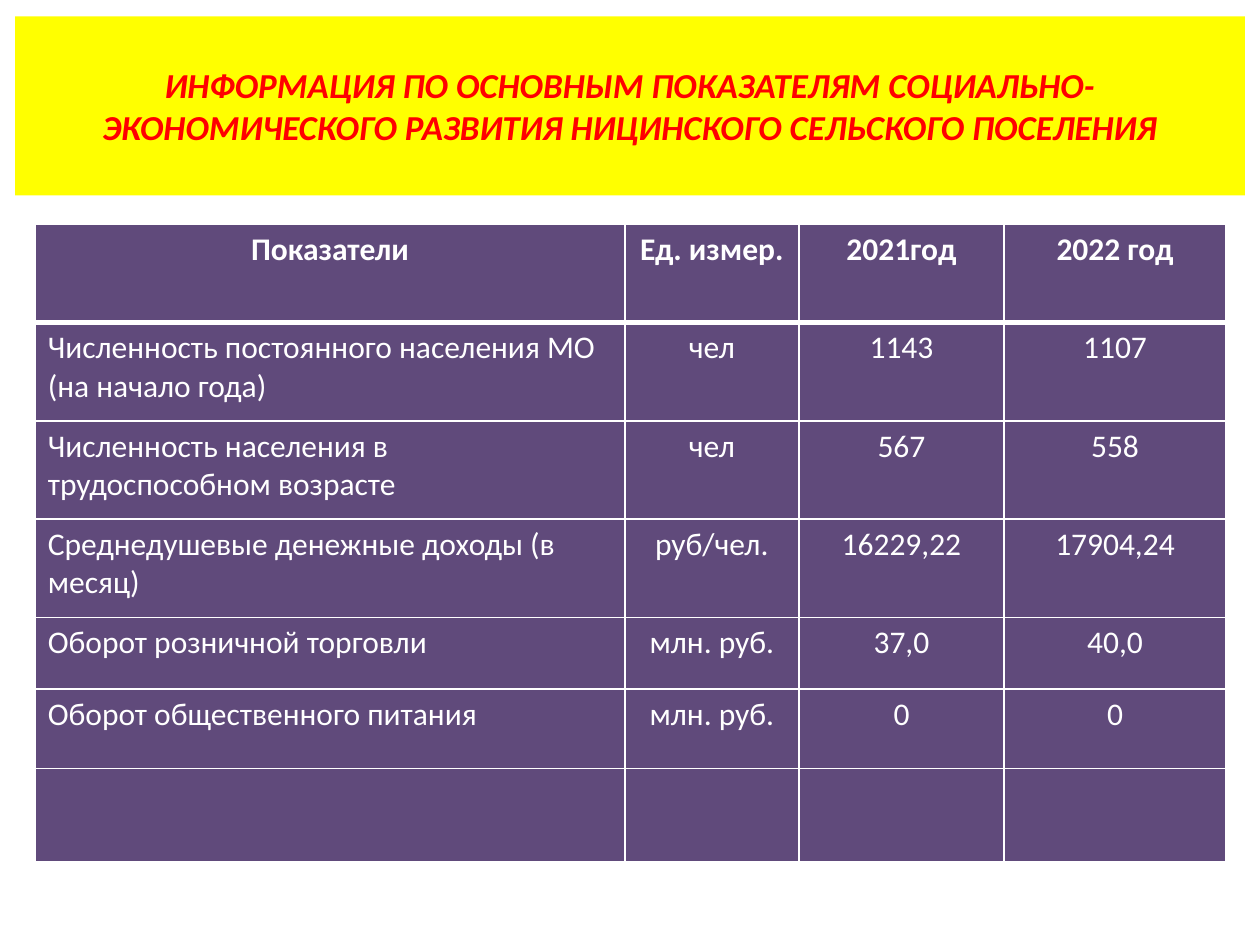
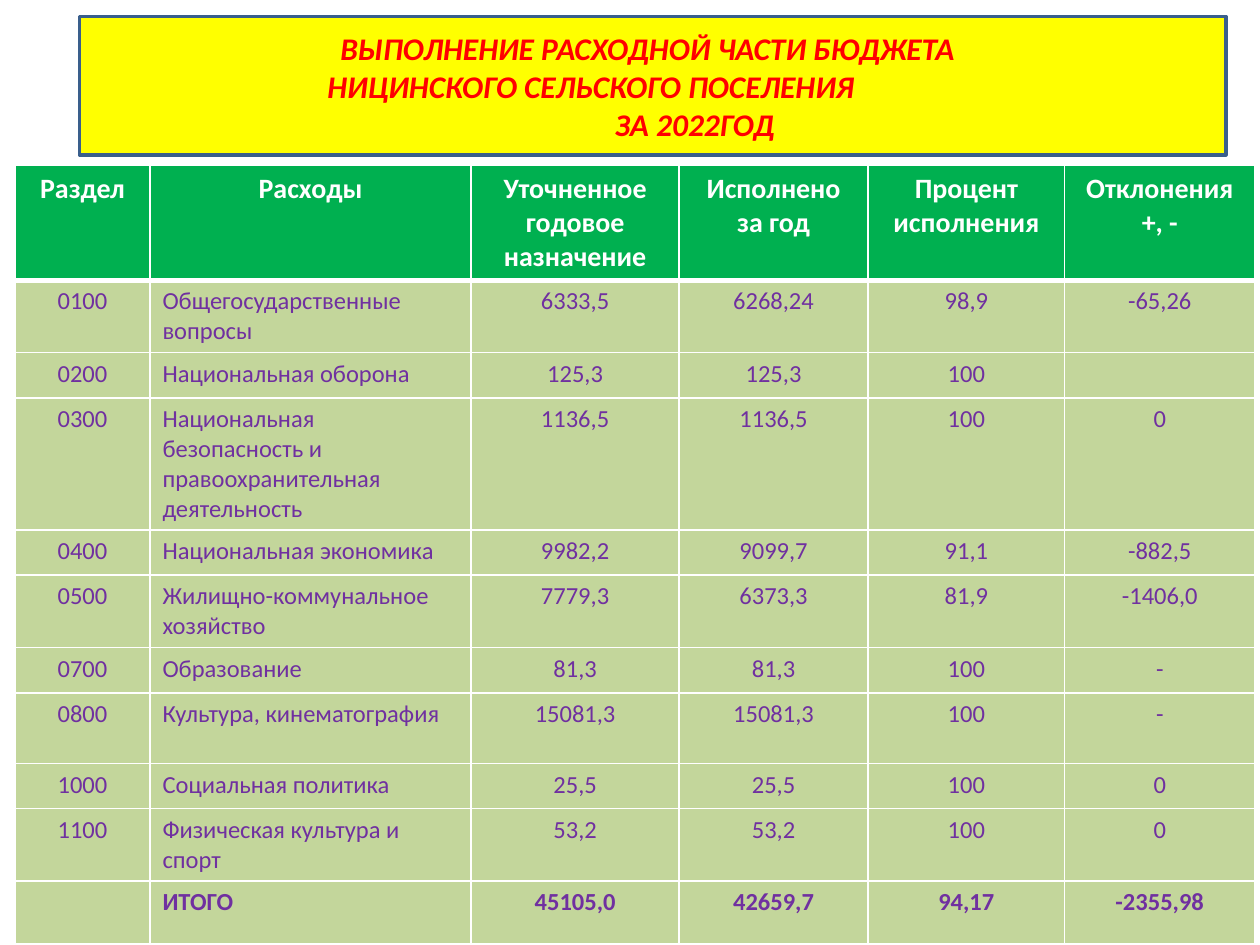
from dataclasses import dataclass

from lxml.etree import SubElement
from pptx import Presentation
from pptx.dml.color import RGBColor
from pptx.enum.text import MSO_ANCHOR as Anchor, MSO_AUTO_SIZE as AutoSize, PP_ALIGN as Align
from pptx.oxml.ns import qn
from pptx.util import Inches, Pt

# Shared look
FONT = "Calibri"
WHITE, YELLOW, RED = "FFFFFF", "FFFF00", "FF0000"
VIOLET, PURPLE, GREEN, OLIVE, NAVY = "604A7B", "7030A0", "00B050", "C3D69B", "3A5F8C"
THIN, THICK = 1, 3


@dataclass(frozen=True)
class TitleLine:
    text: str
    indent: float = 0


@dataclass(frozen=True)
class TitleBand:
    box: tuple[float, float, float, float]
    lines: list[TitleLine]
    size: int
    outline: str | None = None
    right_inset: float = 0.1


@dataclass(frozen=True)
class RowStyle:
    fill: str
    color: str
    size: int
    bold: bool = False


@dataclass(frozen=True)
class IndicatorTable:
    left: float
    top: float
    columns: list[float]
    heights: list[float]
    rows: list[list[str]]
    header: RowStyle
    body: RowStyle
    name_column: int
    total: RowStyle | None = None


def rgb(value: str) -> RGBColor:
    return RGBColor.from_string(value)


def style_text(paragraph, size: int, color: str, bold: bool, italic: bool = False) -> None:
    for run in paragraph.runs:
        font = run.font
        font.name, font.size = FONT, Pt(size)
        font.bold, font.italic = bold, italic
        font.color.rgb = rgb(color)


def draw_title(slide, band: TitleBand) -> None:
    title = slide.shapes.title
    title.left, title.top, title.width, title.height = map(Inches, band.box)
    title.fill.solid()
    title.fill.fore_color.rgb = rgb(YELLOW)
    if band.outline:
        title.line.color.rgb = rgb(band.outline)
        title.line.width = Pt(2)

    frame = title.text_frame
    frame.word_wrap, frame.auto_size = True, AutoSize.NONE
    frame.vertical_anchor = Anchor.MIDDLE
    frame.margin_right = Inches(band.right_inset)
    frame.text = "\n".join(line.text for line in band.lines)
    for paragraph, line in zip(frame.paragraphs, band.lines):
        paragraph.alignment = Align.CENTER
        properties = paragraph._p.get_or_add_pPr()
        properties.set("marL", str(Inches(line.indent)))
        properties.set("indent", "0")
        style_text(paragraph, band.size, RED, bold=True, italic=True)


def draw_borders(cell, row: int) -> None:
    """White grid with a thicker rule under the header row."""
    widths = {
        "a:lnL": THIN,
        "a:lnR": THIN,
        "a:lnT": THICK if row == 1 else THIN,
        "a:lnB": THICK if row == 0 else THIN,
    }
    properties = cell._tc.get_or_add_tcPr()
    for position, (tag, width) in enumerate(widths.items()):
        border = SubElement(properties, qn(tag), w=str(Pt(width)))
        fill = SubElement(border, qn("a:solidFill"))
        SubElement(fill, qn("a:srgbClr"), val=WHITE)
        properties.insert(position, border)


def draw_table(slide, spec: IndicatorTable) -> None:
    table = slide.shapes.add_table(
        len(spec.rows), len(spec.columns), Inches(spec.left), Inches(spec.top),
        Inches(sum(spec.columns)), Inches(sum(spec.heights)),
    ).table
    table.horz_banding = False
    for column, width in zip(table.columns, spec.columns):
        column.width = Inches(width)

    last = len(spec.rows) - 1
    for r, values in enumerate(spec.rows):
        table.rows[r].height = Inches(spec.heights[r])
        style = spec.header if r == 0 else spec.body
        if r == last and spec.total:
            style = spec.total
        for c, value in enumerate(values):
            cell = table.cell(r, c)
            cell.text = value
            cell.fill.solid()
            cell.fill.fore_color.rgb = rgb(style.fill)
            draw_borders(cell, r)
            paragraph = cell.text_frame.paragraphs[0]
            is_name = r > 0 and c == spec.name_column
            paragraph.alignment = Align.LEFT if is_name else Align.CENTER
            paragraph.font.size = Pt(style.size)
            style_text(paragraph, style.size, style.color, style.bold)


# Slide 1: social and economic indicators
INDICATORS_TITLE = TitleBand(
    box=(0.12, 0.13, 9.76, 1.42),
    lines=[TitleLine("ИНФОРМАЦИЯ ПО ОСНОВНЫМ ПОКАЗАТЕЛЯМ СОЦИАЛЬНО-ЭКОНОМИЧЕСКОГО "
                     "РАЗВИТИЯ НИЦИНСКОГО СЕЛЬСКОГО ПОСЕЛЕНИЯ")],
    size=20,
)
INDICATORS = IndicatorTable(
    left=0.28, top=1.78,
    columns=[4.68, 1.38, 1.63, 1.76],
    heights=[0.78] * 4 + [0.57, 0.63, 0.74],
    rows=[
        ["Показатели", "Ед. измер.", "2021год", "2022 год"],
        ["Численность постоянного населения МО (на начало года)", "чел", "1143", "1107"],
        ["Численность населения в трудоспособном возрасте", "чел", "567", "558"],
        ["Среднедушевые денежные доходы (в месяц)", "руб/чел.", "16229,22", "17904,24"],
        ["Оборот розничной торговли", "млн. руб.", "37,0", "40,0"],
        ["Оборот общественного питания", "млн. руб.", "0", "0"],
        [""] * 4,
    ],
    header=RowStyle(VIOLET, WHITE, 18, bold=True),
    body=RowStyle(VIOLET, WHITE, 18),
    name_column=0,
)

# Slide 2: budget spending
SPENDING_TITLE = TitleBand(
    box=(0.63, 0.13, 9.1, 1.1),
    lines=[
        TitleLine("ВЫПОЛНЕНИЕ РАСХОДНОЙ ЧАСТИ БЮДЖЕТА", indent=0.9),
        TitleLine("НИЦИНСКОГО СЕЛЬСКОГО ПОСЕЛЕНИЯ"),
        TitleLine("ЗА 2022ГОД", indent=1.65),
    ],
    size=18, outline=NAVY, right_inset=1.08,
)
SPENDING = IndicatorTable(
    left=0.12, top=1.31,
    columns=[1.07, 2.55, 1.65, 1.5, 1.56, 1.51],
    heights=[0.88, 0.56, 0.36, 1.02, 0.36, 0.56, 0.36, 0.56, 0.36, 0.56, 0.5],
    rows=[
        ["Раздел", "Расходы", "Уточненное годовое назначение", "Исполнено за год",
         "Процент исполнения", "Отклонения +, -"],
        ["0100", "Общегосударственные вопросы", "6333,5", "6268,24", "98,9", "-65,26"],
        ["0200", "Национальная оборона", "125,3", "125,3", "100", ""],
        ["0300", "Национальная безопасность и правоохранительная деятельность",
         "1136,5", "1136,5", "100", "0"],
        ["0400", "Национальная экономика", "9982,2", "9099,7", "91,1", "-882,5"],
        ["0500", "Жилищно-коммунальное хозяйство", "7779,3", "6373,3", "81,9", "-1406,0"],
        ["0700", "Образование", "81,3", "81,3", "100", "-"],
        ["0800", "Культура, кинематография", "15081,3", "15081,3", "100", "-"],
        ["1000", "Социальная политика", "25,5", "25,5", "100", "0"],
        ["1100", "Физическая культура и спорт", "53,2", "53,2", "100", "0"],
        ["", "ИТОГО", "45105,0", "42659,7", "94,17", "-2355,98"],
    ],
    header=RowStyle(GREEN, WHITE, 16, bold=True),
    body=RowStyle(OLIVE, PURPLE, 14),
    total=RowStyle(OLIVE, PURPLE, 14, bold=True),
    name_column=1,
)


def main() -> None:
    deck = Presentation()
    deck.slide_width, deck.slide_height = Inches(10), Inches(7.5)
    title_only = deck.slide_layouts.get_by_name("Title Only")
    for band, spec in ((INDICATORS_TITLE, INDICATORS), (SPENDING_TITLE, SPENDING)):
        slide = deck.slides.add_slide(title_only)
        draw_title(slide, band)
        draw_table(slide, spec)
    deck.save("out.pptx")


if __name__ == "__main__":
    main()
